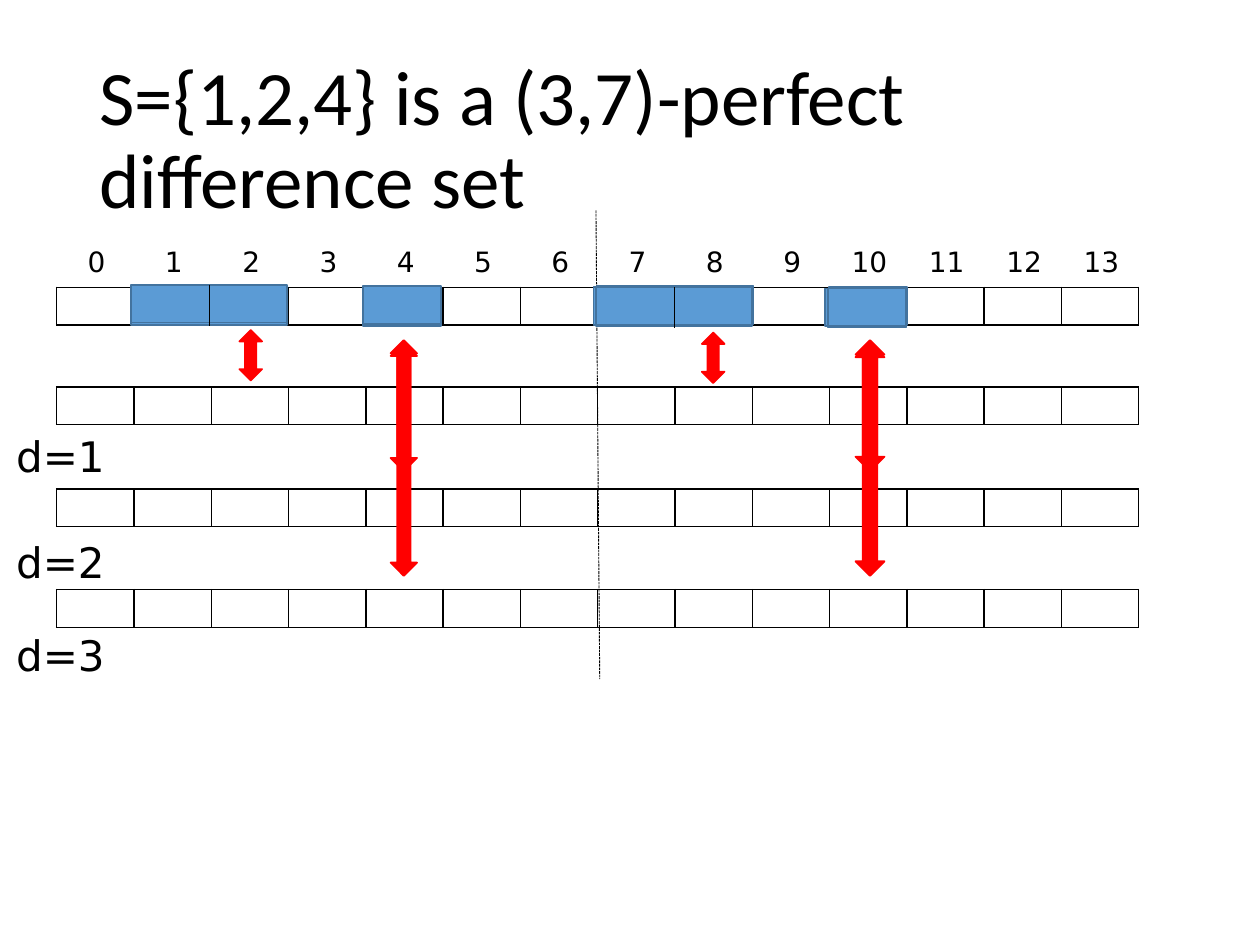
from lxml import etree
from pptx import Presentation
from pptx.dml.color import RGBColor
from pptx.enum.dml import MSO_LINE
from pptx.enum.shapes import MSO_CONNECTOR, MSO_SHAPE
from pptx.enum.text import MSO_ANCHOR, PP_ALIGN
from pptx.oxml.ns import qn
from pptx.util import Inches, Pt

RECTANGLE = MSO_SHAPE.RECTANGLE
DOUBLE_ARROW = MSO_SHAPE.UP_DOWN_ARROW
STRAIGHT = MSO_CONNECTOR.STRAIGHT
SHORT_DASH = MSO_LINE.SQUARE_DOT
MIDDLE = MSO_ANCHOR.MIDDLE
TOP = MSO_ANCHOR.TOP
CENTER = PP_ALIGN.CENTER
LEFT = PP_ALIGN.LEFT

COLORS = {
    "ink": "000000",
    "paper": "FFFFFF",
    "marked": "5B9BD5",
    "marked_edge": "43739E",
    "arrow": "FF0000",
}
TITLE_FONT = "Calibri"
BODY_FONT = "DejaVu Sans"
COLUMNS = 14
TABLE_WIDTH = 8.59
ROW_HEIGHT = 0.3


def color(name):
    return RGBColor.from_string(COLORS[name])


class SlideBuilder:
    def __init__(self, slide):
        self.shapes = slide.shapes

    def add_text_run(self, paragraph, text, size, font, align=LEFT):
        paragraph.alignment = align
        run = paragraph.add_run()
        run.text = text
        run.font.size = Pt(size)
        run.font.name = font
        run.font.color.rgb = color("ink")

    def text(self, left, top, width, height, text, size, font=BODY_FONT, anchor=TOP, spacing=1.0):
        box = self.shapes.add_textbox(Inches(left), Inches(top), Inches(width), Inches(height))
        frame = box.text_frame
        frame.word_wrap = True
        frame.vertical_anchor = anchor
        paragraph = frame.paragraphs[0]
        paragraph.line_spacing = spacing
        self.add_text_run(paragraph, text, size, font)

    def shape(self, kind, left, top, width, height, fill, edge):
        shape = self.shapes.add_shape(kind, Inches(left), Inches(top), Inches(width), Inches(height))
        shape.shadow.inherit = False
        shape.fill.solid()
        shape.fill.fore_color.rgb = color(fill)
        shape.line.color.rgb = color(edge)
        shape.line.width = Pt(1)

    def arrow(self, left, top, width, height):
        self.shape(DOUBLE_ARROW, left, top, width, height, "arrow", "arrow")

    def line(self, start, end, dash=None):
        points = [Inches(value) for value in (*start, *end)]
        connector = self.shapes.add_connector(STRAIGHT, *points)
        connector.line.color.rgb = color("ink")
        connector.line.width = Pt(0.5)
        if dash is not None:
            connector.line.dash_style = dash
        etree.SubElement(connector._element.spPr, qn("a:effectLst"))

    def marked_cells(self, left, top):
        for offset, drop, width in ((0, 0, 1.24), (1.84, 0.01, 0.62)):
            self.shape(RECTANGLE, left + offset, top + drop, width, ROW_HEIGHT, "marked", "marked_edge")
        self.line((left + 0.62, top), (left + 0.62, top + 0.31))

    def border(self, cell):
        properties = cell._tc.get_or_add_tcPr()
        for index, side in enumerate(("lnL", "lnR", "lnT", "lnB")):
            edge = etree.Element(qn(f"a:{side}"), w=str(Pt(1)))
            fill = etree.SubElement(edge, qn("a:solidFill"))
            etree.SubElement(fill, qn("a:srgbClr"), val=COLORS["ink"])
            properties.insert(index, edge)

    def table(self, left, top, labels=None):
        frame = self.shapes.add_table(
            1, COLUMNS, Inches(left), Inches(top), Inches(TABLE_WIDTH), Inches(ROW_HEIGHT))
        table = frame.table
        table.first_row = False
        table.horz_banding = False
        for index, cell in enumerate(table.iter_cells()):
            table.columns[index].width = Inches(TABLE_WIDTH / COLUMNS)
            cell.fill.solid()
            cell.fill.fore_color.rgb = color("paper")
            cell.margin_left = cell.margin_right = Inches(0.07)
            cell.margin_top = cell.margin_bottom = Inches(0.04)
            paragraph = cell.text_frame.paragraphs[0]
            if labels:
                self.add_text_run(paragraph, labels[index], 16, BODY_FONT, CENTER)
            else:
                etree.SubElement(paragraph._p, qn("a:endParaRPr"), sz="1000")
                self.border(cell)


def main():
    presentation = Presentation()
    presentation.slide_width = Inches(10)
    presentation.slide_height = Inches(7.5)
    builder = SlideBuilder(presentation.slides.add_slide(presentation.slide_layouts[6]))

    builder.table(0.46, 1.92, [str(number) for number in range(COLUMNS)])
    for top in (2.28, 3.07, 3.88, 4.68):
        builder.table(0.45, top)

    builder.line((4.73, 1.67), (4.76, 5.39), SHORT_DASH)
    first_period = ((1.04, 2.28), (1.04, 2.26))
    second_period = ((4.71, 2.28), (4.74, 2.27), (4.73, 2.29), (4.73, 2.28))
    for left, top in first_period + second_period:
        builder.marked_cells(left, top)

    for left, top in ((1.9, 2.62), (5.57, 2.64)):
        builder.arrow(left, top, 0.18, 0.4)
    for left, width in ((3.1, 0.21), (6.79, 0.23)):
        builder.arrow(left, 2.7, width, 1.04)
        builder.arrow(left, 2.72, width, 1.85)

    builder.text(0.69, 0.4, 8.62, 1.45, "S={1,2,4} is a (3,7)-perfect difference set",
                 44, TITLE_FONT, MIDDLE, 0.9)
    for difference, top in enumerate((3.37, 4.21, 4.95), start=1):
        builder.text(0.03, top, 0.94, 0.5, f"d={difference}", 24)

    presentation.save("out.pptx")


if __name__ == "__main__":
    main()
